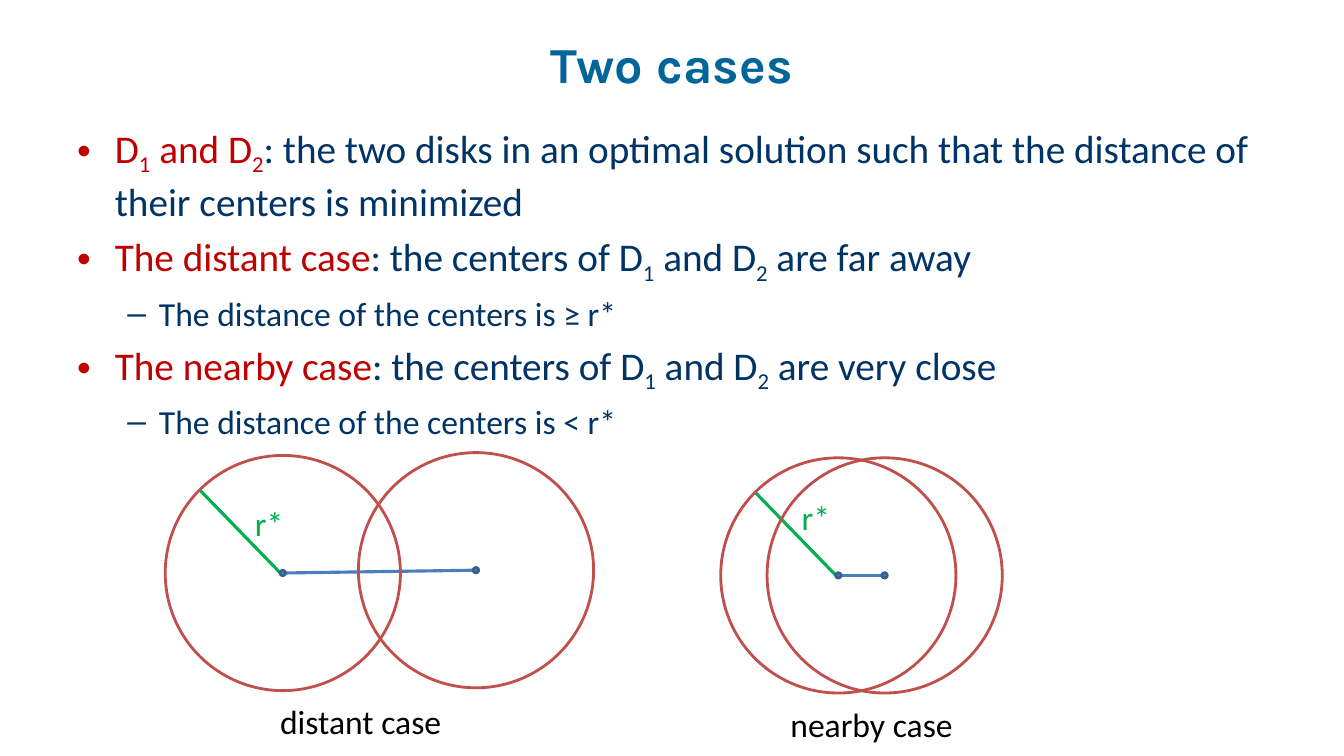
from pptx import Presentation
from pptx.dml.color import RGBColor
from pptx.enum import shapes, text
from pptx.oxml.ns import qn
from pptx.util import Pt

TEAL = RGBColor(0x00, 0x66, 0x99)
NAVY = RGBColor(0x00, 0x33, 0x66)
RED = RGBColor(0xC0, 0x00, 0x00)
ROSE = RGBColor(0xC0, 0x50, 0x4D)
GREEN = RGBColor(0x00, 0xB0, 0x50)
BLUE = RGBColor(0x4B, 0x7E, 0xBC)
FILL = RGBColor(0x4F, 0x81, 0xBD)
EDGE = RGBColor(0x3A, 0x5F, 0x8C)
BLACK = RGBColor(0, 0, 0)

RADIUS = 84
REACH = 59.4
DOT = 1.9

POINTS = [
    (0, [("D_1_ and D_2_", RED),
         (": the two disks in an optimal solution such that "
          "the distance of their centers is minimized", NAVY)]),
    (0, [("The distant case", RED),
         (": the centers of D_1_ and D_2_ are far away", NAVY)]),
    (1, [("The distance of the centers is ≥ r*", NAVY)]),
    (0, [("The nearby case", RED),
         (": the centers of D_1_ and D_2_ are very close", NAVY)]),
    (1, [("The distance of the centers is < r*", NAVY)]),
]
LEVELS = [("•", 28, 27, -27), ("–", 24, 58.5, -22.5)]


def write(para, words, size=24, color=BLACK, font="Calibri", bold=False, gap=0):
    """Add runs to a paragraph, with parts between underscores as subscripts."""
    for i, part in enumerate(words.split("_")):
        if not part:
            continue
        run = para.add_run()
        run.text = part
        run.font.size = Pt(size)
        run.font.name = font
        run.font.bold = bold
        run.font.color.rgb = color
        props = run._r.get_or_add_rPr()
        if i % 2:
            props.set("baseline", "-25000")
        if gap:
            props.set("spc", str(gap))


def box(slide, left, top, width, height, wrap=True):
    """Add an empty text box and return its frame."""
    frame = slide.shapes.add_textbox(
        Pt(left), Pt(top), Pt(width), Pt(height)).text_frame
    frame.word_wrap = wrap
    return frame


def label(slide, words, left, top, width, color=BLACK):
    """Add a one-line label."""
    write(box(slide, left, top, width, 36, False).paragraphs[0], words, color=color)


def title(slide, words):
    """Add the centred heading."""
    frame = box(slide, 48, 0, 864, 90)
    frame.vertical_anchor = text.MSO_ANCHOR.MIDDLE
    para = frame.paragraphs[0]
    para.alignment = text.PP_ALIGN.CENTER
    write(para, words, size=36, color=TEAL, font="Karla", bold=True, gap=10)


def bullets(slide, points):
    """Add the two-level bullet list."""
    frame = box(slide, 48, 85, 864, 356)
    for i, (level, runs) in enumerate(points):
        para = frame.add_paragraph() if i else frame.paragraphs[0]
        mark, size, left, indent = LEVELS[level]
        para.level = level
        para.space_before = Pt(size * 0.2)
        props = para._p.get_or_add_pPr()
        props.set("marL", str(Pt(left)))
        props.set("indent", str(Pt(indent)))
        face = props.makeelement(qn("a:buFont"), {"typeface": "Arial"})
        char = props.makeelement(qn("a:buChar"), {"char": mark})
        props.extend([face, char])
        for words, color in runs:
            write(para, words, size=size, color=color)


def line(slide, start, end, color):
    """Add a straight line between two points."""
    link = slide.shapes.add_connector(
        shapes.MSO_CONNECTOR.STRAIGHT, *map(Pt, start + end))
    link.line.color.rgb = color
    link.line.width = Pt(2.25)
    props = link._element.spPr
    props.append(props.makeelement(qn("a:effectLst"), {}))


def ring(slide, center, radius, color, fill=None):
    """Add a circle around a center, hollow unless a fill is given."""
    x, y = center
    disk = slide.shapes.add_shape(
        shapes.MSO_SHAPE.OVAL, Pt(x - radius), Pt(y - radius),
        Pt(2 * radius), Pt(2 * radius))
    disk.shadow.inherit = False
    if fill is None:
        disk.fill.background()
    else:
        disk.fill.solid()
        disk.fill.fore_color.rgb = fill
    disk.line.color.rgb = color
    disk.line.width = Pt(2)


def pair(slide, first, second):
    """Draw two disks with their centers, center line and radius."""
    x, y = first
    line(slide, first, second, BLUE)
    line(slide, (x, y + 1.8), (x - REACH, y - REACH), GREEN)
    for center in (second, first):
        ring(slide, center, RADIUS, ROSE)
        ring(slide, center, DOT, EDGE, FILL)


def main():
    """Build and save the slide."""
    deck = Presentation()
    deck.slide_width, deck.slide_height = Pt(960), Pt(540)
    slide = deck.slides.add_slide(deck.slide_layouts[6])
    title(slide, "Two cases")
    bullets(slide, POINTS)
    pair(slide, (202, 409.3), (340, 407.3))
    pair(slide, (598.8, 411), (631.9, 411))
    label(slide, "distant case", 193, 497, 130)
    label(slide, "nearby case", 557.5, 499, 132)
    label(slide, "r*", 175, 355.5, 35, GREEN)
    label(slide, "r*", 565.5, 351.5, 35, GREEN)
    deck.save("out.pptx")


if __name__ == "__main__":
    main()
